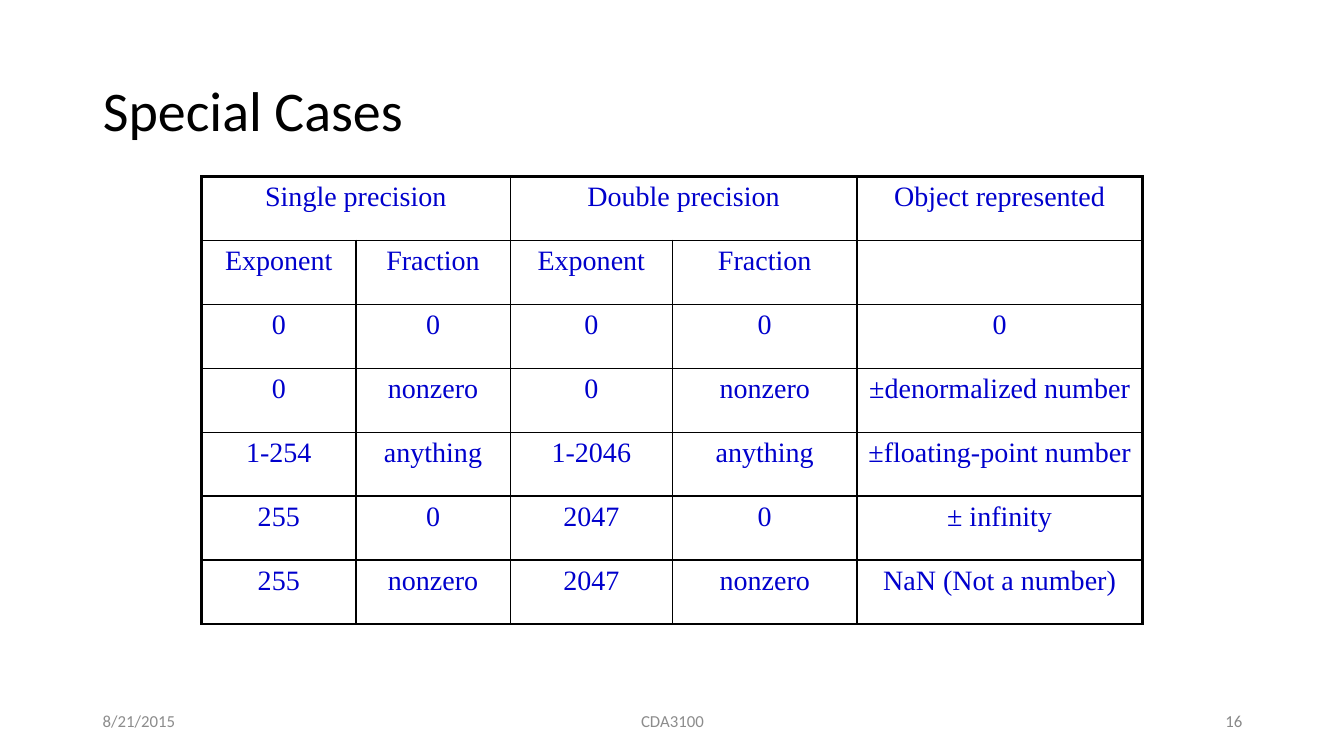
from lxml import etree
from pptx import Presentation
from pptx.dml.color import RGBColor
from pptx.enum.text import MSO_ANCHOR, MSO_AUTO_SIZE, PP_ALIGN
from pptx.oxml.ns import qn
from pptx.util import Inches, Pt

COLORS = {"title": "000000", "border": "000000", "cell": "0000CC",
          "footer": "8C8C8C", "number": "898989"}


def add_run(paragraph, text, font, size, color, align):
    paragraph.alignment = align
    run = paragraph.add_run()
    run.text = text
    run.font.name = font
    run.font.size = Pt(size)
    run.font.color.rgb = RGBColor.from_string(COLORS[color])


def add_border(cell, side, width):
    """Draw one side (L, R, T or B) of a cell, in that order."""
    line = etree.SubElement(cell._tc.get_or_add_tcPr(), qn(f"a:ln{side}"),
                            w=str(Pt(width)))
    fill = etree.SubElement(line, qn("a:solidFill"))
    etree.SubElement(fill, qn("a:srgbClr"), val=COLORS["border"])


prs = Presentation()
prs.slide_width, prs.slide_height = Inches(13.33), Inches(7.5)
slide = prs.slides.add_slide(prs.slide_layouts[5])

# Title
title = slide.shapes.title
title.left, title.top = Inches(0.92), Inches(0.4)
title.width, title.height = Inches(11.5), Inches(1.45)
title_frame = title.text_frame
title_frame.auto_size = MSO_AUTO_SIZE.NONE
title_frame.vertical_anchor = MSO_ANCHOR.MIDDLE
title_frame.paragraphs[0].line_spacing = 0.9
add_run(title_frame.paragraphs[0], "Special Cases", "Calibri", 40, "title", PP_ALIGN.LEFT)

# Table of special values
rows = [
    ["Single precision", "", "Double precision", "", "Object represented"],
    ["Exponent", "Fraction", "Exponent", "Fraction", ""],
    ["0", "0", "0", "0", "0"],
    ["0", "nonzero", "0", "nonzero", "±denormalized number"],
    ["1-254", "anything", "1-2046", "anything", "±floating-point number"],
    ["255", "0", "2047", "0", "± infinity"],
    ["255", "nonzero", "2047", "nonzero", "NaN (Not a number)"],
]
column_widths = [1.53, 1.53, 1.61, 1.83, 2.83]
last_row, last_col = len(rows) - 1, len(column_widths) - 1
cases = slide.shapes.add_table(len(rows), len(column_widths), Inches(2), Inches(1.75),
                               Inches(9.33), Inches(4.44)).table
cases.first_row = cases.horz_banding = False
for column, width in zip(cases.columns, column_widths):
    column.width = Inches(width)
for first in (0, 2):
    cases.cell(0, first).merge(cases.cell(0, first + 1))

for r, row in enumerate(rows):
    for c, text in enumerate(row):
        cell = cases.cell(r, c)
        outer_sides = {"L": c == 0, "R": c == last_col, "T": r == 0, "B": r == last_row}
        for side, is_outer in outer_sides.items():
            add_border(cell, side, 2.25 if is_outer else 1)
        cell.fill.background()
        if text:
            add_run(cell.text_frame.paragraphs[0], text, "Times New Roman", 20, "cell",
                    PP_ALIGN.CENTER)

# Footer
footers = [
    ("8/21/2015", 0.92, 3, PP_ALIGN.LEFT, "footer"),
    ("CDA3100", 4.42, 4.5, PP_ALIGN.CENTER, "footer"),
    ("16", 9.42, 3, PP_ALIGN.RIGHT, "number"),
]
for text, left, width, align, color in footers:
    frame = slide.shapes.add_textbox(Inches(left), Inches(6.95), Inches(width),
                                     Inches(0.4)).text_frame
    frame.word_wrap = True
    frame.vertical_anchor = MSO_ANCHOR.MIDDLE
    add_run(frame.paragraphs[0], text, "Calibri", 12, color, align)

prs.save("out.pptx")
